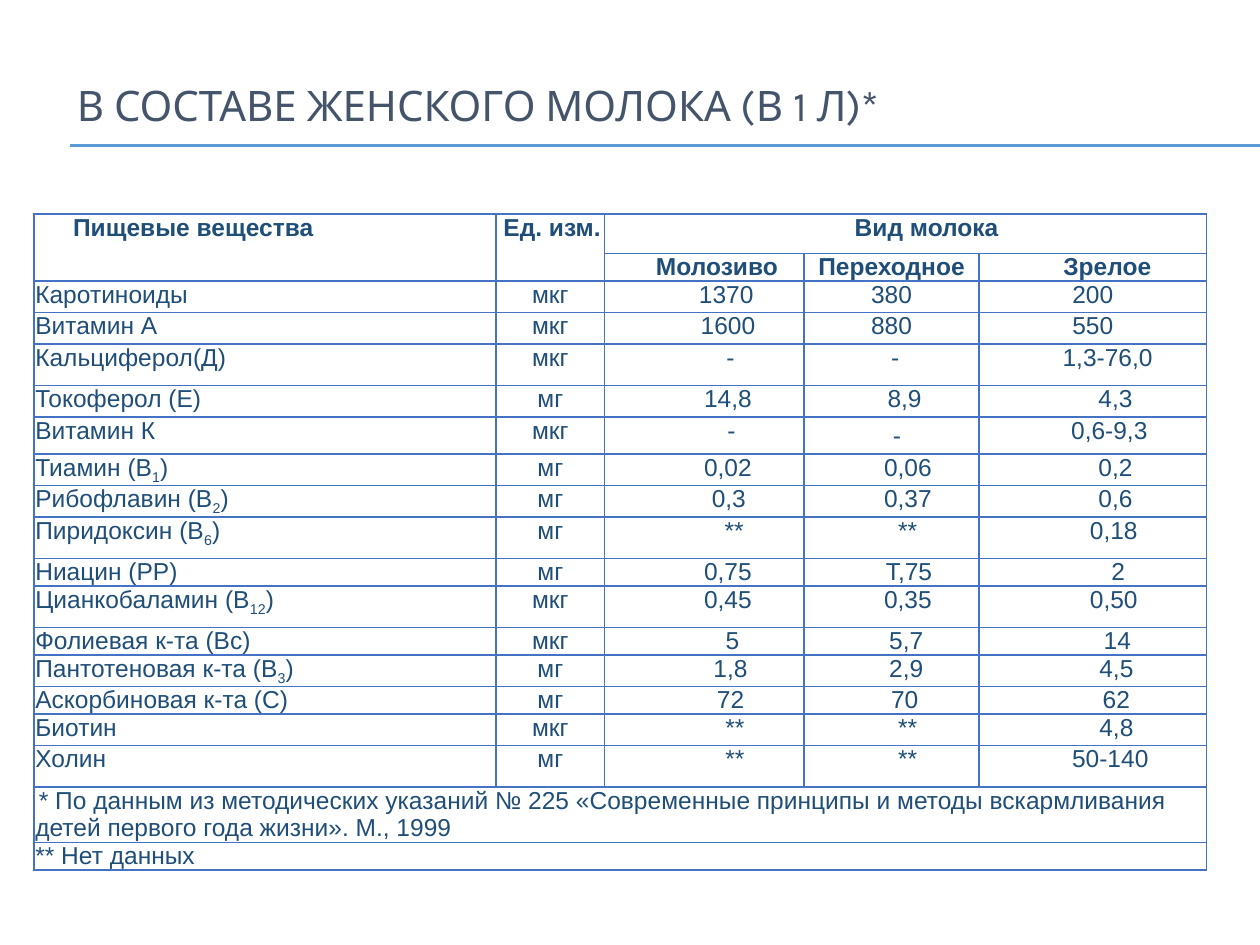
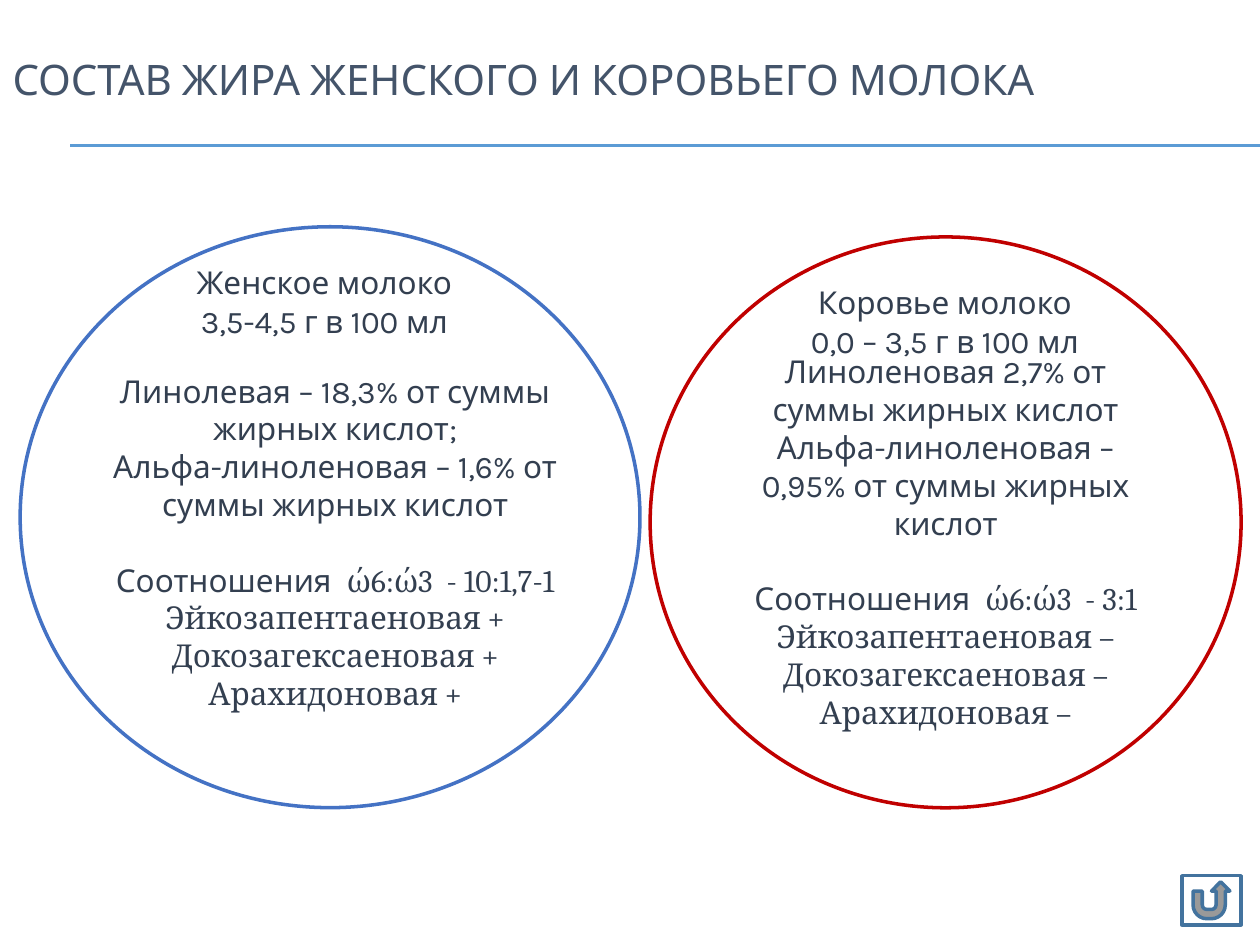
from dataclasses import dataclass

from lxml.etree import SubElement
from pptx import Presentation
from pptx.dml.color import RGBColor
from pptx.enum.shapes import MSO_CONNECTOR, MSO_SHAPE
from pptx.enum.text import MSO_ANCHOR, MSO_AUTO_SIZE, PP_ALIGN
from pptx.oxml.ns import qn
from pptx.util import Pt


@dataclass(frozen=True)
class Theme:
    """Colours, fonts and type sizes shared by the slides."""
    white: str = "FFFFFF"
    rule: str = "5B9BD5"
    title: str = "44546A"
    body: str = "333F50"
    table: str = "1F4E79"
    blue: str = "4472C4"
    red: str = "C00000"
    button: str = "43739E"
    font: str = "Karla"
    serif: str = "Cambria"
    table_font: str = "Arial"
    title_size: float = 24
    body_size: float = 18
    table_size: float = 14
    body_pitch: float = 21.6
    heading_pitch: float = 22.2


def apply(obj, **values):
    """Set every given attribute on the object."""
    for name, value in values.items():
        setattr(obj, name, value)


class Deck:
    """Holds the presentation, its theme and the current slide."""

    def __init__(self, theme):
        """Start an empty presentation of 10 by 7.5 inches."""
        self.t = theme
        self.prs = Presentation()
        apply(self.prs, slide_width=Pt(720), slide_height=Pt(540))
        self.s = None

    def slide(self, title, box):
        """Add a slide with its title and the double rule beneath."""
        self.s = self.prs.slides.add_slide(self.prs.slide_layouts[5])
        for y in (82.8, 83.5):
            self.rule(40.3, y, 720)
        sp = self.s.shapes.title
        left, top, width, height = map(Pt, box)
        apply(sp, left=left, top=top, width=width, height=height)
        tf = sp.text_frame
        apply(tf, auto_size=MSO_AUTO_SIZE.NONE, word_wrap=True,
              vertical_anchor=MSO_ANCHOR.MIDDLE)
        p = tf.paragraphs[0]
        p.alignment = PP_ALIGN.LEFT
        self.run(p, title, self.t.font, self.t.title_size, self.t.title)

    def rule(self, left, y, right):
        """Draw a thin horizontal line."""
        line = self.s.shapes.add_connector(
            MSO_CONNECTOR.STRAIGHT, Pt(left), Pt(y), Pt(right), Pt(y))
        line.line.width = Pt(0.75)
        line.line.color.rgb = RGBColor.from_string(self.t.rule)
        SubElement(line._element.spPr, qn("a:effectLst"))

    def run(self, p, text, font, size, color, bold=False):
        """Add a formatted run to a paragraph."""
        r = p.add_run()
        r.text = text
        apply(r.font, name=font, size=Pt(size), bold=bold)
        r.font.color.rgb = RGBColor.from_string(color)
        return r

    def shape(self, kind, box, outline):
        """Add a white preset shape with a coloured outline."""
        sp = self.s.shapes.add_shape(kind, *map(Pt, box))
        sp.shadow.inherit = False
        sp.fill.solid()
        sp.fill.fore_color.rgb = RGBColor.from_string(self.t.white)
        sp.line.color.rgb = RGBColor.from_string(outline)
        sp.line.width = Pt(2)
        return sp

    def text_box(self, box):
        """Add an empty text box."""
        return self.s.shapes.add_textbox(*map(Pt, box))

    def fill_text(self, sp, groups, pitch, **frame):
        """Set centred lines in groups one line apart."""
        tf = sp.text_frame
        apply(tf, word_wrap=True, **frame)
        p = tf.paragraphs[0]
        for g, group in enumerate(groups):
            for i, line in enumerate(group):
                if g or i:
                    p = tf.add_paragraph()
                apply(p, alignment=PP_ALIGN.CENTER, line_spacing=Pt(pitch),
                      space_before=Pt(pitch if g and not i else 0))
                for text, font in line:
                    self.run(p, text, font, self.t.body_size, self.t.body)

    def table(self, left, top, widths, heights):
        """Add a plain table without banding."""
        frame = self.s.shapes.add_table(
            len(heights), len(widths), Pt(left), Pt(top),
            Pt(sum(widths)), Pt(sum(heights)))
        tbl = frame.table
        apply(tbl, first_row=False, horz_banding=False)
        for col, width in zip(tbl.columns, widths):
            col.width = Pt(width)
        for row, height in zip(tbl.rows, heights):
            row.height = Pt(height)
        for cell in tbl.iter_cells():
            self.frame_cell(cell)
        return tbl

    def frame_cell(self, cell):
        """Give a cell its margins, borders and white fill."""
        apply(cell, margin_left=Pt(0.7), margin_right=Pt(0.7),
              margin_top=0, margin_bottom=0)
        tc_pr = cell._tc.get_or_add_tcPr()
        for side in ("a:lnL", "a:lnR", "a:lnT", "a:lnB"):
            ln = SubElement(tc_pr, qn(side), w=str(Pt(1)))
            fill = SubElement(ln, qn("a:solidFill"))
            SubElement(fill, qn("a:srgbClr"), val=self.t.blue)
        cell.fill.solid()
        cell.fill.fore_color.rgb = RGBColor.from_string(self.t.white)

    def cell(self, cell, text, align=PP_ALIGN.LEFT, left=0, first=0, bold=False):
        """Fill a cell; text between underscores is subscript."""
        p = cell.text_frame.paragraphs[0]
        p.alignment = align
        p_pr = p._p.get_or_add_pPr()
        p_pr.set("marL", str(Pt(left)))
        p_pr.set("indent", str(Pt(first)))
        for i, part in enumerate(text.split("_")):
            if part:
                r = self.run(p, part, self.t.table_font, self.t.table_size,
                             self.t.table, bold)
                if i % 2:
                    r._r.get_or_add_rPr().set("baseline", "-25000")


LOW, MID, HIGH = 15.5, 18, 23.75
NUTRIENTS = [
    ("Каротиноиды", "мкг", MID, ("1370", "380", "200"), (25, 0, 0)),
    ("Витамин А", "мкг", MID, ("1600", "880", "550"), (27, 0, 0)),
    ("Кальциферол(Д)", "мкг", HIGH, ("-", "-", "1,3-76,0"), (30, 49, 17)),
    ("Токоферол (Е)", "мг", MID, ("14,8", "8,9", "4,3"), (27, 47, 26)),
    ("Витамин К", "мкг", 21, ("-", "-", "0,6-9,3"), (31, 50, 19)),
    ("Тиамин (В_1_)", "мг", MID, ("0,02", "0,06", "0,2"), (27, 45, 26)),
    ("Рибофлавин (В_2_)", "мг", MID, ("0,3", "0,37", "0,6"), (28, 45, 26)),
    ("Пиридоксин (В_6_)", "мг", HIGH, ("**", "**", "0,18"), (34, 53, 24)),
    ("Ниацин (РР)", "мг", LOW, ("0,75", "Т,75", "2"), (27, 46, 29)),
    ("Цианкобаламин (В_12_)", "мкг", HIGH, ("0,45", "0,35", "0,50"), (27, 45, 24)),
    ("Фолиевая к-та (Вс)", "мкг", LOW, ("5", "5,7", "14"), (32, 48, 28)),
    ("Пантотеновая к-та (В_3_)", "мг", MID, ("1,8", "2,9", "4,5"), (30, 48, 27)),
    ("Аскорбиновая к-та (С)", "мг", LOW, ("72", "70", "62"), (30, 49, 27)),
    ("Биотин", "мкг", MID, ("**", "**", "4,8"), (35, 53, 27)),
    ("Холин", "мг", HIGH, ("**", "**", "50-140"), (35, 53, 20)),
]
FOOTNOTES = [
    ("* По данным из методических указаний № 225 «Современные принципы и методы "
     "вскармливания детей первого года жизни». М., 1999", 2),
    ("** Нет данных", 0),
]


def milk_composition(deck):
    """Build the table of nutrients by kind of milk."""
    deck.slide("В СОСТАВЕ ЖЕНСКОГО МОЛОКА (В 1 Л)*", (36.7, 37.4, 720, 44.6))
    heights = [22.5, LOW] + [row[2] for row in NUTRIENTS] + [31, LOW]
    tbl = deck.table(19.5, 122.4, (264, 62, 114, 100, 130), heights)
    center = PP_ALIGN.CENTER

    spans = [((0, 0), (1, 0)), ((0, 1), (1, 1)), ((0, 2), (0, 4))]
    notes_row = len(NUTRIENTS) + 2
    spans += [((notes_row + i, 0), (notes_row + i, 4)) for i in range(len(FOOTNOTES))]
    for start, end in spans:
        tbl.cell(*start).merge(tbl.cell(*end))

    headings = [
        (0, 0, "Пищевые вещества", PP_ALIGN.LEFT, 21.6, 0),
        (0, 1, "Ед. изм.", center, 0, 2),
        (0, 2, "Вид молока", center, 24, 0),
        (1, 2, "Молозиво", center, 14.4, 0),
        (1, 3, "Переходное", center, 0, 0),
        (1, 4, "Зрелое", center, 16.6, 0),
    ]
    for row, col, text, align, left, first in headings:
        deck.cell(tbl.cell(row, col), text, align, left, first, bold=True)

    for row, (name, unit, _, values, indents) in enumerate(NUTRIENTS, 2):
        deck.cell(tbl.cell(row, 0), name)
        deck.cell(tbl.cell(row, 1), unit, center)
        for col, (value, left) in enumerate(zip(values, indents), 2):
            align = PP_ALIGN.LEFT if col == 3 and left else center
            deck.cell(tbl.cell(row, col), value, align, left)
        if name == "Витамин К":
            tbl.cell(row, 3).vertical_anchor = MSO_ANCHOR.MIDDLE
    for row, (note, first) in enumerate(FOOTNOTES, notes_row):
        deck.cell(tbl.cell(row, 0), note, first=first)


def acid_groups(t, shares, ratio, sign):
    """Return the lines on fatty acids for one kind of milk."""
    acids = ("Эйкозапентаеновая", "Докозагексаеновая", "Арахидоновая")
    return [
        [[(share, t.font)] for share in shares],
        [[("Соотношения  ", t.font), (f"ώ6:ώ3  - {ratio}", t.serif)]]
        + [[(f"{acid} {sign}", t.serif)] for acid in acids],
    ]


def fat_composition(deck):
    """Build the comparison of human and cow milk fat."""
    t = deck.t
    deck.slide("СОСТАВ ЖИРА ЖЕНСКОГО И КОРОВЬЕГО МОЛОКА", (0, 16.6, 720, 56.2))
    cow = deck.shape(MSO_SHAPE.OVAL, (371.5, 135.4, 337.7, 326.2), t.red)
    deck.shape(MSO_SHAPE.OVAL, (11.5, 129.6, 354.2, 331.9), t.blue)
    human = deck.text_box((39.6, 230.4, 303.8, 180))
    middle = MSO_ANCHOR.MIDDLE
    inset = Pt(3.6 + t.body_pitch)
    deck.fill_text(human, acid_groups(
        t, ("Линолевая – 18,3% от суммы жирных кислот;",
            "Альфа-линоленовая – 1,6% от суммы жирных кислот"), "10:1,7-1", "+"),
        t.body_pitch, vertical_anchor=middle, margin_bottom=inset)
    deck.fill_text(cow, acid_groups(
        t, ("Линоленовая 2,7% от суммы жирных кислот",
            "Альфа-линоленовая – 0,95% от суммы жирных кислот"), "3:1", "–"),
        t.body_pitch, vertical_anchor=middle, margin_top=inset)

    headings = [
        ((84.2, 146.2, 202.3, 51.1), ("Женское молоко", "3,5-4,5 г в 100 мл")),
        ((450, 157.7, 180, 51.1), ("Коровье молоко", "0,0 – 3,5 г в 100 мл")),
    ]
    for box, lines in headings:
        deck.fill_text(deck.text_box(box), [[[(line, t.font)] for line in lines]],
                       t.heading_pitch)
    deck.shape(MSO_SHAPE.ACTION_BUTTON_RETURN, (675.4, 500.4, 33.8, 28.1), t.button)


def main():
    """Build both slides and save the file."""
    deck = Deck(Theme())
    milk_composition(deck)
    fat_composition(deck)
    deck.prs.save("out.pptx")


if __name__ == "__main__":
    main()
